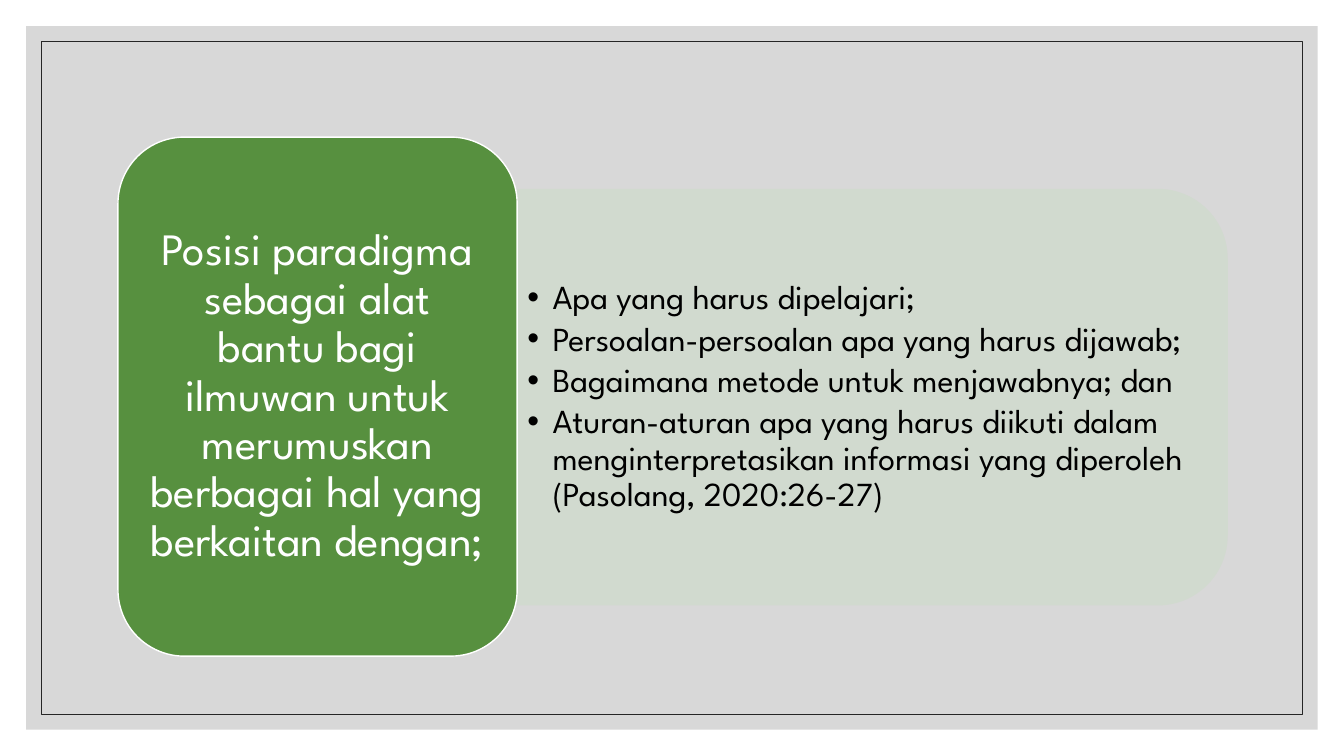
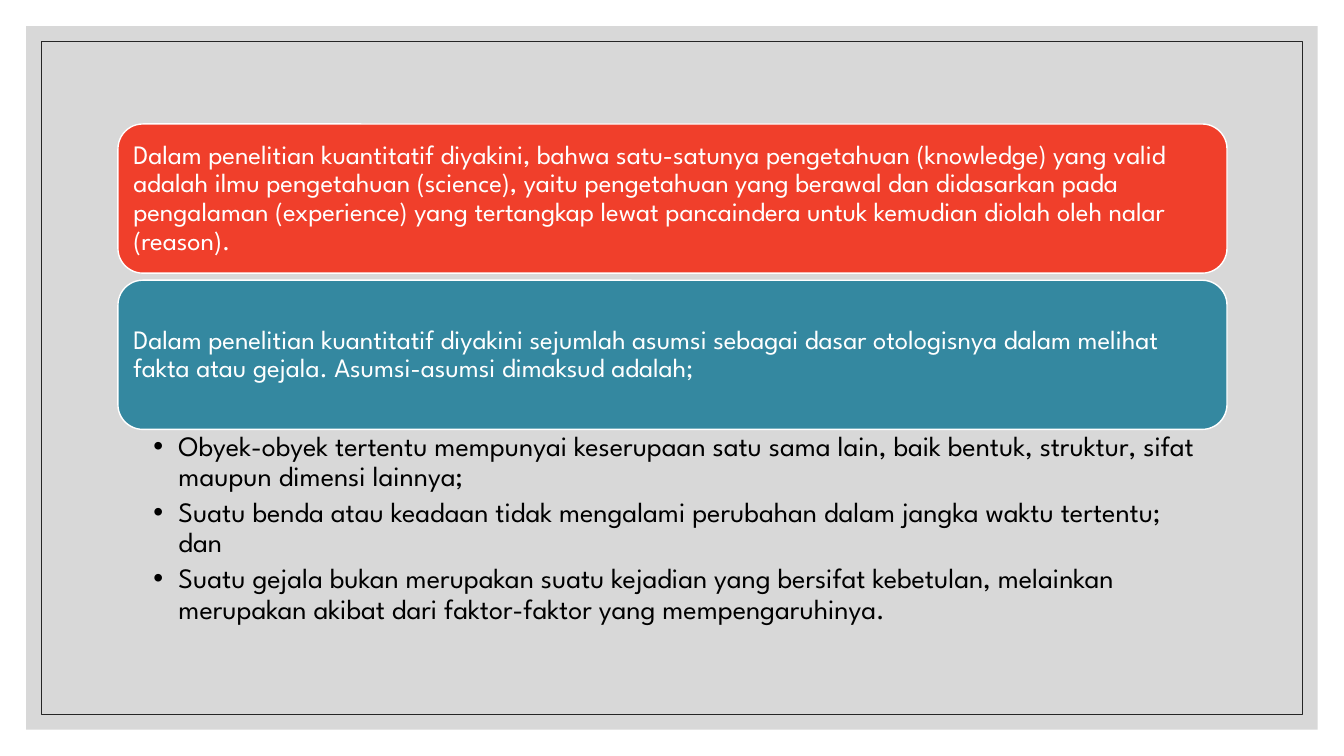
"""Builds two slides on paradigm and quantitative research assumptions."""
from lxml import etree
from pptx import Presentation
from pptx.dml.color import RGBColor
from pptx.enum.shapes import MSO_SHAPE
from pptx.enum.text import MSO_ANCHOR, MSO_AUTO_SIZE, PP_ALIGN
from pptx.oxml.ns import qn
from pptx.util import Inches, Pt

RECT, ROUNDED = MSO_SHAPE.RECTANGLE, MSO_SHAPE.ROUNDED_RECTANGLE
ROUNDED_TOP = MSO_SHAPE.ROUND_2_SAME_RECTANGLE
TOP, MIDDLE = MSO_ANCHOR.TOP, MSO_ANCHOR.MIDDLE
LEFT, CENTER = PP_ALIGN.LEFT, PP_ALIGN.CENTER
FONT = "League Spartan"
WHITE = RGBColor(0xFF, 0xFF, 0xFF)
BLACK = RGBColor(0, 0, 0)
GREY = RGBColor(0xBF, 0xBF, 0xBF)
DARK = RGBColor(0x26, 0x26, 0x26)
PALE_GREEN = RGBColor(0xD1, 0xDB, 0xCF)
GREEN = RGBColor(0x57, 0x90, 0x3F)
RED = RGBColor(0xF0, 0x3F, 0x2B)
BLUE = RGBColor(0x34, 0x88, 0xA0)

WIDTH, HEIGHT = 13.33, 7.5
CONTENT_LEFT, CONTENT_WIDTH = 1.17, 11
ROLE = "Posisi paradigma sebagai alat bantu bagi ilmuwan untuk merumuskan berbagai hal yang berkaitan dengan; "
QUESTIONS = [
    "Apa yang harus dipelajari;",
    "Persoalan-persoalan apa yang harus dijawab;",
    "Bagaimana metode untuk menjawabnya; dan",
    "Aturan-aturan apa yang harus diikuti dalam menginterpretasikan informasi yang diperoleh (Pasolang, 2020:26-27)",
]
BELIEFS = [
    ("Dalam penelitian kuantitatif diyakini, bahwa satu-satunya pengetahuan (knowledge) yang valid adalah ilmu pengetahuan (science), yaitu pengetahuan yang berawal dan didasarkan pada pengalaman (experience) yang tertangkap lewat pancaindera untuk kemudian diolah oleh nalar (reason).", RED),
    ("Dalam penelitian kuantitatif diyakini sejumlah asumsi sebagai dasar otologisnya dalam melihat fakta atau gejala. Asumsi-asumsi dimaksud adalah;", BLUE),
]
ASSUMPTIONS = [
    "Obyek-obyek tertentu mempunyai keserupaan satu sama lain, baik bentuk, struktur, sifat maupun dimensi lainnya;",
    "Suatu benda atau keadaan tidak mengalami perubahan dalam jangka waktu tertentu; dan",
    "Suatu gejala bukan merupakan suatu kejadian yang bersifat kebetulan, melainkan merupakan akibat dari faktor-faktor yang mempengaruhinya.",
]


def set_alpha(color_format_parent, percent):
    for color in color_format_parent.iter(qn("a:srgbClr")):
        etree.SubElement(color, qn("a:alpha")).set("val", str(percent * 1000))


def add_box(slide, kind, box, fill=None, line=None, line_width=1, alpha=None):
    shape = slide.shapes.add_shape(kind, *map(Inches, box))
    shape.shadow.inherit = False
    if fill is None:
        shape.fill.background()
    else:
        shape.fill.solid()
        shape.fill.fore_color.rgb = fill
    if line is None:
        shape.line.fill.background()
    else:
        shape.line.color.rgb = line
        shape.line.width = Pt(line_width)
    if alpha:
        set_alpha(shape.element.spPr, alpha)
    return shape


def write(shape, texts, size, color, insets, after, anchor=MIDDLE, align=LEFT, bullet=False):
    frame = shape.text_frame
    frame.word_wrap = True
    frame.auto_size = MSO_AUTO_SIZE.NONE
    frame.vertical_anchor = anchor
    frame.margin_left, frame.margin_top, frame.margin_right, frame.margin_bottom = map(Inches, insets)
    for index, text in enumerate(texts):
        paragraph = frame.paragraphs[0] if index == 0 else frame.add_paragraph()
        paragraph.alignment = align
        paragraph.line_spacing = 0.9
        paragraph.space_before = Pt(0)
        paragraph.space_after = Pt(size * after)
        run = paragraph.add_run()
        run.text = text
        run.font.name, run.font.size = FONT, Pt(size)
        run.font.color.rgb = color
        if bullet:
            properties = paragraph._p.get_or_add_pPr()
            properties.set("marL", str(Inches(0.25)))
            properties.set("indent", str(-Inches(0.25)))
            etree.SubElement(properties, qn("a:buChar")).set("char", "•")


def write_list(slide, box, texts, size, **style):
    body = slide.placeholders[1]
    body.left, body.top, body.width, body.height = map(Inches, box)
    slide.shapes.element.append(body.element)
    write(body, texts, size, BLACK, bullet=True, **style)


def add_slide(deck, layout):
    slide = deck.slides.add_slide(layout)
    title = slide.shapes.title.element
    title.getparent().remove(title)
    return slide


def add_frame(slide, layout):
    for margin, style in [(0.26, {"fill": GREY, "alpha": 60}),
                          (0.41, {"line": DARK, "line_width": 0.5})]:
        box = (margin, margin, WIDTH - 2 * margin, HEIGHT - 2 * margin)
        layout.shapes.element.append(add_box(slide, RECT, box, **style).element)


def build_role_slide(slide):
    panel = add_box(slide, ROUNDED_TOP, (6.59, 0.42, 4.12, 7.04), PALE_GREEN, PALE_GREEN, alpha=90)
    panel.rotation = 90
    card = add_box(slide, ROUNDED, (CONTENT_LEFT, 1.36, 3.96, 5.15), GREEN, WHITE)
    write(card, [ROLE], 32, WHITE, insets=(0.13, 0.07, 0.13, 0.07), after=0.35, align=CENTER)
    write_list(slide, (5.13, 2.08, 6.84, 3.72), QUESTIONS, 24,
               insets=(0.1, 0.05, 0.1, 0.05), after=0.15, anchor=MIDDLE)


def build_belief_slide(slide):
    top, height, gap = 1.23, 1.48, 0.07
    for index, (text, color) in enumerate(BELIEFS):
        box = (CONTENT_LEFT, top + index * (height + gap), CONTENT_WIDTH, height)
        card = add_box(slide, ROUNDED, box, color, WHITE)
        write(card, [text], 19, WHITE, insets=(0.08,) * 4, after=0.35)
    write_list(slide, (CONTENT_LEFT, 4.26, CONTENT_WIDTH, 2.06), ASSUMPTIONS, 20,
               insets=(0.35, 0.03, 0.16, 0.03), after=0.2, anchor=TOP)


def main():
    deck = Presentation()
    deck.slide_width, deck.slide_height = Inches(WIDTH), Inches(HEIGHT)
    layout = deck.slide_layouts[1]
    role_slide, belief_slide = (add_slide(deck, layout) for _ in range(2))
    add_frame(role_slide, layout)
    build_role_slide(role_slide)
    build_belief_slide(belief_slide)
    deck.save("out.pptx")


if __name__ == "__main__":
    main()
